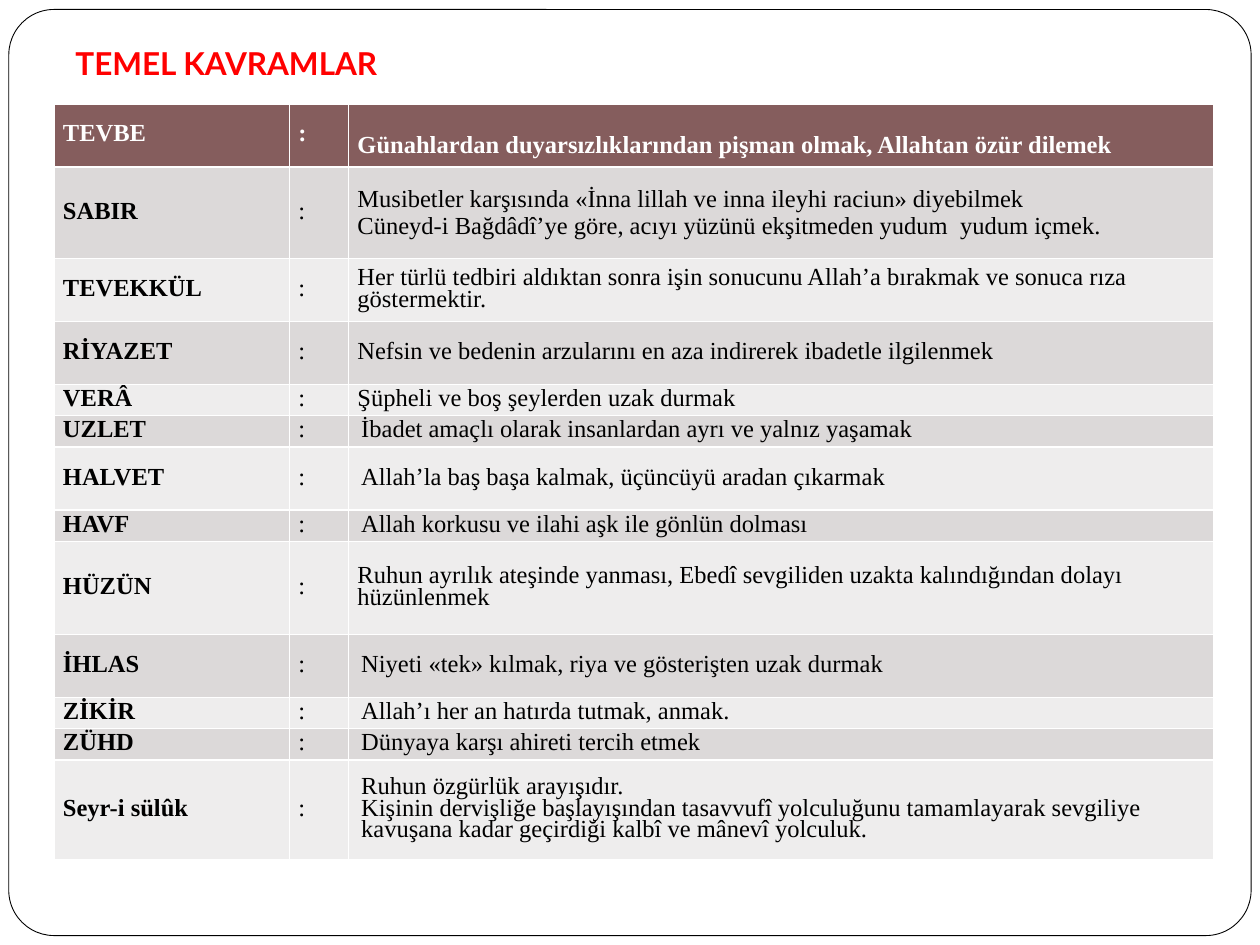
import pptx
import pptx.dml.color
import pptx.enum.shapes
import pptx.enum.text
import pptx.util

W, H = pptx.util.Inches(10), pptx.util.Inches(7.5)
MIDDLE = pptx.enum.text.MSO_ANCHOR.MIDDLE
COLUMNS = (1.87, 0.47, 6.87)
SERIF = "Times New Roman"

# term, row units, extra left indent, paragraphs
CONCEPTS = [
    ("TEVBE", 2, 0, ["Günahlardan duyarsızlıklarından pişman olmak, Allahtan özür dilemek"]),
    ("SABIR", 2.92, 0, ["Musibetler karşısında «İnna lillah ve inna ileyhi raciun» diyebilmek",
                        "Cüneyd-i Bağdâdî’ye göre, acıyı yüzünü ekşitmeden yudum  yudum içmek."]),
    ("TEVEKKÜL", 2, 0, ["Her türlü tedbiri aldıktan sonra işin sonucunu Allah’a bırakmak "
                        "ve sonuca rıza göstermektir."]),
    ("RİYAZET", 2, 0, ["Nefsin ve bedenin arzularını en aza indirerek ibadetle ilgilenmek"]),
    ("VERÂ", 1, 0, ["Şüpheli ve boş şeylerden uzak durmak"]),
    ("UZLET", 1, 0.03, ["İbadet amaçlı olarak insanlardan ayrı ve yalnız yaşamak"]),
    ("HALVET", 2, 0.03, ["Allah’la baş başa kalmak, üçüncüyü aradan çıkarmak"]),
    ("HAVF", 1, 0.03, ["Allah korkusu ve ilahi aşk ile gönlün dolması"]),
    ("HÜZÜN", 2.96, 0, ["Ruhun ayrılık ateşinde yanması, Ebedî sevgiliden uzakta "
                        "kalındığından dolayı hüzünlenmek"]),
    ("İHLAS", 2, 0.03, ["Niyeti «tek» kılmak, riya ve gösterişten uzak durmak"]),
    ("ZİKİR", 1, 0.03, ["Allah’ı her an hatırda tutmak, anmak."]),
    ("ZÜHD", 1, 0.03, ["Dünyaya karşı ahireti tercih etmek"]),
    ("Seyr-i sülûk", 3.16, 0.03, [
        "Ruhun özgürlük arayışıdır.",
        "Kişinin dervişliğe başlayışından tasavvufî yolculuğunu tamamlayarak sevgiliye "
        "kavuşana kadar geçirdiği kalbî ve mânevî yolculuk."]),
]


def rgb(value):
    """Return the colour for a hex string."""
    return pptx.dml.color.RGBColor.from_string(value)


def share(x, y, w, h):
    """Return a box in EMU from shares of the slide's size."""
    return int(x * W), int(y * H), int(w * W), int(h * H)


def add_run(p, text, font, size, color, bold):
    """Add one formatted run to a paragraph."""
    r = p.add_run()
    r.text = text
    r.font.name, r.font.size, r.font.bold = font, pptx.util.Pt(size), bold
    r.font.color.rgb = rgb(color)


def add_frame(s, box):
    """Draw the rounded frame around the slide."""
    sp = s.shapes.add_shape(pptx.enum.shapes.MSO_SHAPE.ROUNDED_RECTANGLE, *box)
    sp.adjustments[0] = 0.049
    sp.shadow.inherit = False
    sp.fill.solid()
    sp.fill.fore_color.rgb = rgb("FFFFFF")
    sp.line.color.rgb = rgb("000000")
    sp.line.width = pptx.util.Pt(0.5)


def add_title(s, box):
    """Place the title at the bottom of its box."""
    tf = s.shapes.add_textbox(*box).text_frame
    tf.word_wrap = True
    tf.vertical_anchor = pptx.enum.text.MSO_ANCHOR.BOTTOM
    tf.margin_bottom = pptx.util.Inches(0.1)
    add_run(tf.paragraphs[0], "TEMEL KAVRAMLAR", "Lato", 18, "FF0000", True)


def fill_cell(cell, paragraphs, fill, color, bold, spacing, indent, top):
    """Fill one table cell with its colour and paragraphs."""
    cell.fill.solid()
    cell.fill.fore_color.rgb = rgb(fill)
    cell.vertical_anchor = MIDDLE
    cell.margin_left = pptx.util.Inches(0.07 + indent)
    cell.margin_right = pptx.util.Inches(0.07)
    cell.margin_top, cell.margin_bottom = pptx.util.Inches(top), 0
    tf = cell.text_frame
    for i, text in enumerate(paragraphs):
        p = tf.add_paragraph() if i else tf.paragraphs[0]
        p.line_spacing = spacing
        add_run(p, text, SERIF, 14, color, bold)


def add_concepts(s, box):
    """Build the table of terms and meanings inside its box."""
    table = s.shapes.add_table(len(CONCEPTS), len(COLUMNS), *box).table
    for column, width in zip(table.columns, COLUMNS):
        column.width = int(box[2] * width / sum(COLUMNS))
    total = sum(units for _, units, _, _ in CONCEPTS)
    for i, (term, units, indent, meaning) in enumerate(CONCEPTS):
        table.rows[i].height = int(box[3] * units / total)
        header = i == 0
        fill = "855D5D" if header else ("EEEDED", "DCD9D9")[i % 2]
        color = "FFFFFF" if header else "000000"
        spacing = 1.0 if term == "SABIR" else 0.8
        top = 0.18 if header else 0
        fill_cell(table.cell(i, 0), [term], fill, color, True, 0.8, 0, 0)
        fill_cell(table.cell(i, 1), [":"], fill, color, header, 0.8, 0, 0)
        fill_cell(table.cell(i, 2), meaning, fill, color, header, spacing, indent, top)


def main():
    """Build and save the slide."""
    prs = pptx.Presentation()
    prs.slide_width, prs.slide_height = W, H
    s = prs.slides.add_slide(prs.slide_layouts[6])
    add_frame(s, share(0.007, 0.01, 0.986, 0.98))
    add_title(s, share(0.05, 0.04, 0.9, 0.06))
    add_concepts(s, share(0.043, 0.11, 0.92, 0.8))
    prs.save("out.pptx")


if __name__ == "__main__":
    main()
